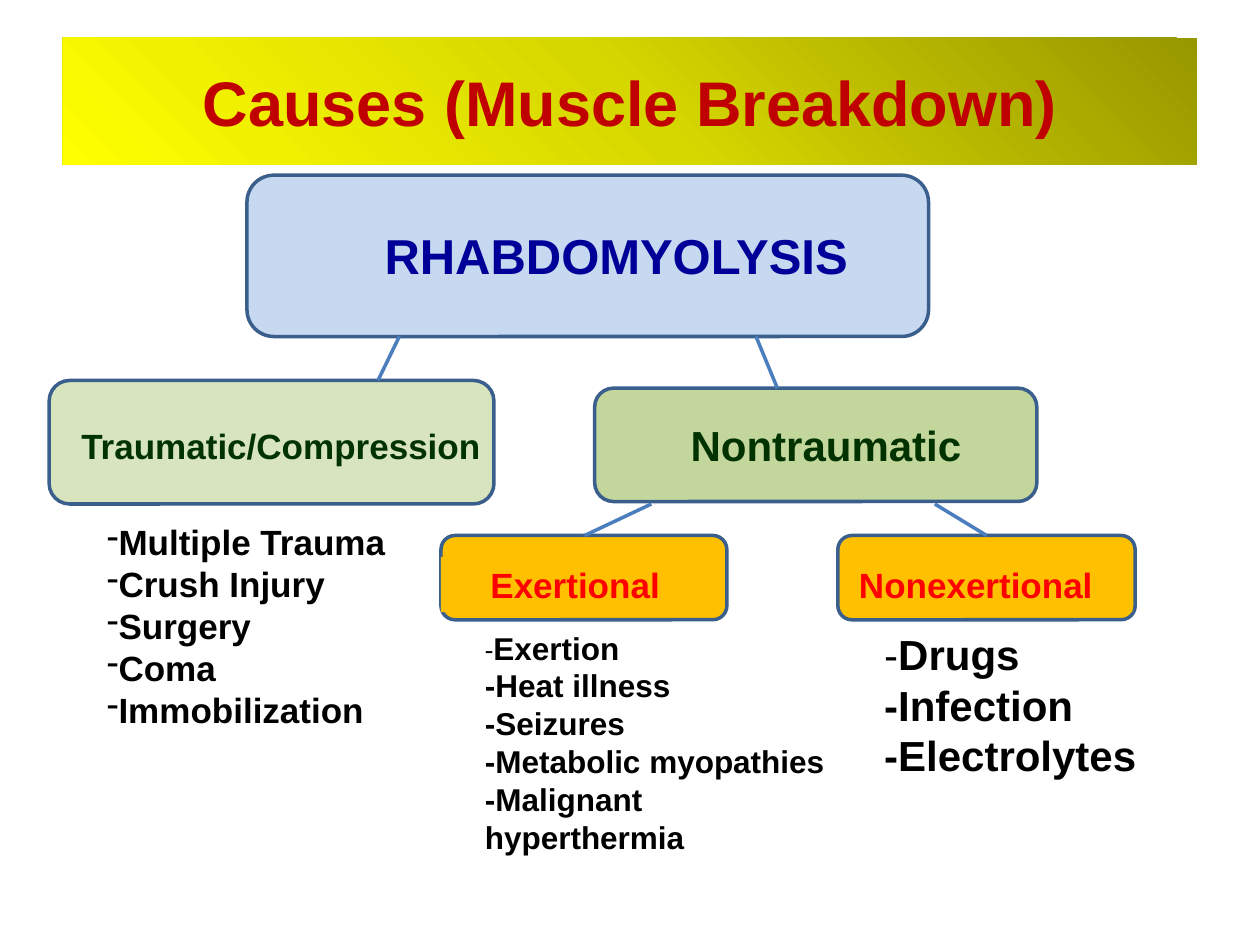
"""Build a slide that charts the causes of rhabdomyolysis as a tree."""
from copy import deepcopy

from pptx import Presentation
from pptx.dml.color import RGBColor
from pptx.enum.shapes import MSO_CONNECTOR, MSO_SHAPE
from pptx.enum.text import MSO_ANCHOR, PP_ALIGN
from pptx.oxml.ns import qn
from pptx.util import Pt

RECT, ROUNDED = MSO_SHAPE.RECTANGLE, MSO_SHAPE.ROUNDED_RECTANGLE
STRAIGHT = MSO_CONNECTOR.STRAIGHT
MIDDLE, TOP = MSO_ANCHOR.MIDDLE, MSO_ANCHOR.TOP
LEFT, CENTER = PP_ALIGN.LEFT, PP_ALIGN.CENTER

COLORS = {
    "title": "C00000", "root": "000099", "branch": "003300", "leaf": "FF0000",
    "body": "000000", "outline": "3A5F8C", "link": "4B7EBC",
    "blue": "C6D9F1", "pale green": "D7E4BD", "green": "C3D69B", "amber": "FFC000",
}
BANNER_STOPS = [(0, "979700"), (0.5, "D7D700"), (1, "FFFF00")]

TITLE = "Causes (Muscle Breakdown)"
TITLE_BOX = (36, 21.6, 648, 72.7)

# text, node box, node fill, label box, label is filled, size, colour, alignment
NODES = [
    ("RHABDOMYOLYSIS", (141.1, 100.1, 389.5, 92.2), "blue",
     (151.9, 125.3, 400.3, 41), False, 28, "root", CENTER),
    ("Traumatic/Compression", (28.1, 217.4, 254.2, 70.6), "pale green",
     (38.2, 239, 244.8, 31.7), False, 20, "branch", CENTER),
    ("Nontraumatic", (339.8, 221.8, 252.7, 64.8), "green",
     (359.3, 236.2, 225.4, 36), True, 24, "branch", CENTER),
    ("Exertional", (252, 306, 163.4, 48.2), "amber",
     (252, 318.2, 153.4, 31.7), True, 20, "leaf", CENTER),
    ("Nonexertional", (478.8, 306, 169.9, 48.2), "amber",
     (483.8, 318.2, 163.4, 31.7), True, 20, "leaf", LEFT),
]
LINKS = [
    (216, 217.4, 228.2, 192.3), (432, 192.3, 444.2, 221.8),
    (372.2, 288, 334.1, 306), (534.2, 288, 563.8, 306),
]
TRAUMA = ["Multiple Trauma", "Crush Injury", "Surgery", "Coma", "Immobilization"]
TRAUMA_BOX = (54, 293.8, 174.2, 172.1)

# causes, box, size, font and size of the first dash
CAUSE_LISTS = [
    (["Exertion", "Heat illness", "Seizures", "Metabolic myopathies",
      "Malignant hyperthermia"], (270, 355.7, 221.8, 181.4), 18, "Calibri", 16),
    (["Drugs", "Infection", "Electrolytes"],
     (498.2, 355.7, 210.2, 94.3), 24, "Arial", 24),
]


def color(key):
    return RGBColor.from_string(COLORS[key])


def set_font(font, size, ink, name="Arial", bold=True):
    font.name, font.size, font.bold = name, Pt(size), bold
    font.color.rgb = color(ink)


def add_box(shapes, kind, box):
    shape = shapes.add_shape(kind, *map(Pt, box))
    shape.shadow.inherit = False
    shape.line.fill.background()
    return shape


def add_text_box(shapes, box):
    frame = shapes.add_textbox(*map(Pt, box)).text_frame
    frame.word_wrap = True
    return frame


def write_line(frame, text, size, ink, align, anchor):
    frame.vertical_anchor = anchor
    paragraph = frame.paragraphs[0]
    paragraph.text, paragraph.alignment = text, align
    set_font(paragraph.font, size, ink)


def next_paragraph(frame, index):
    return frame.add_paragraph() if index else frame.paragraphs[0]


def add_banner(shapes):
    banner = add_box(shapes, RECT, TITLE_BOX)
    banner.fill.gradient()
    banner.fill.gradient_angle = 225
    stops = banner._element.spPr.find(".//" + qn("a:gsLst"))
    stops.insert(1, deepcopy(stops[0]))
    for stop, (position, value) in zip(banner.fill.gradient_stops, BANNER_STOPS):
        stop.position = position
        stop.color.rgb = RGBColor.from_string(value)
    write_line(banner.text_frame, TITLE, 36, "title", CENTER, MIDDLE)


def add_node(shapes, text, box, fill, label_box, filled, size, ink, align):
    members = shapes.add_group_shape().shapes
    node = add_box(members, ROUNDED, box)
    node.fill.solid()
    node.fill.fore_color.rgb = color(fill)
    node.line.color.rgb = color("outline")
    node.line.width = Pt(2)
    label = members.add_textbox(*map(Pt, label_box))
    if filled:
        label.fill.solid()
        label.fill.fore_color.rgb = color(fill)
    label.text_frame.word_wrap = True
    write_line(label.text_frame, text, size, ink, align, TOP)


def add_link(shapes, ends):
    link = shapes.add_connector(STRAIGHT, *map(Pt, ends))
    link.line.color.rgb = color("link")
    link.line.width = Pt(2)
    properties = link._element.spPr
    properties.append(properties.makeelement(qn("a:effectLst"), {}))


def add_trauma_list(shapes):
    frame = add_text_box(shapes, TRAUMA_BOX)
    for index, cause in enumerate(TRAUMA):
        paragraph = next_paragraph(frame, index)
        properties = paragraph._p.get_or_add_pPr()
        properties.append(properties.makeelement(qn("a:buChar"), {"char": "-"}))
        paragraph.text = cause
        set_font(paragraph.font, 20, "body")


def add_cause_list(shapes, causes, box, size, dash_font, dash_size):
    frame = add_text_box(shapes, box)
    for index, cause in enumerate(causes):
        paragraph = next_paragraph(frame, index)
        if index:
            paragraph.text = "-" + cause
            set_font(paragraph.font, size, "body")
        else:
            dash, name = paragraph.add_run(), paragraph.add_run()
            dash.text, name.text = "-", cause
            set_font(dash.font, dash_size, "body", dash_font, False)
            set_font(name.font, size, "body")


def main():
    deck = Presentation()
    deck.slide_width, deck.slide_height = Pt(720), Pt(540)
    shapes = deck.slides.add_slide(deck.slide_layouts[6]).shapes
    add_banner(shapes)
    for node in NODES:
        add_node(shapes, *node)
    for ends in LINKS:
        add_link(shapes, ends)
    add_trauma_list(shapes)
    for cause_list in CAUSE_LISTS:
        add_cause_list(shapes, *cause_list)
    deck.save("out.pptx")


if __name__ == "__main__":
    main()
